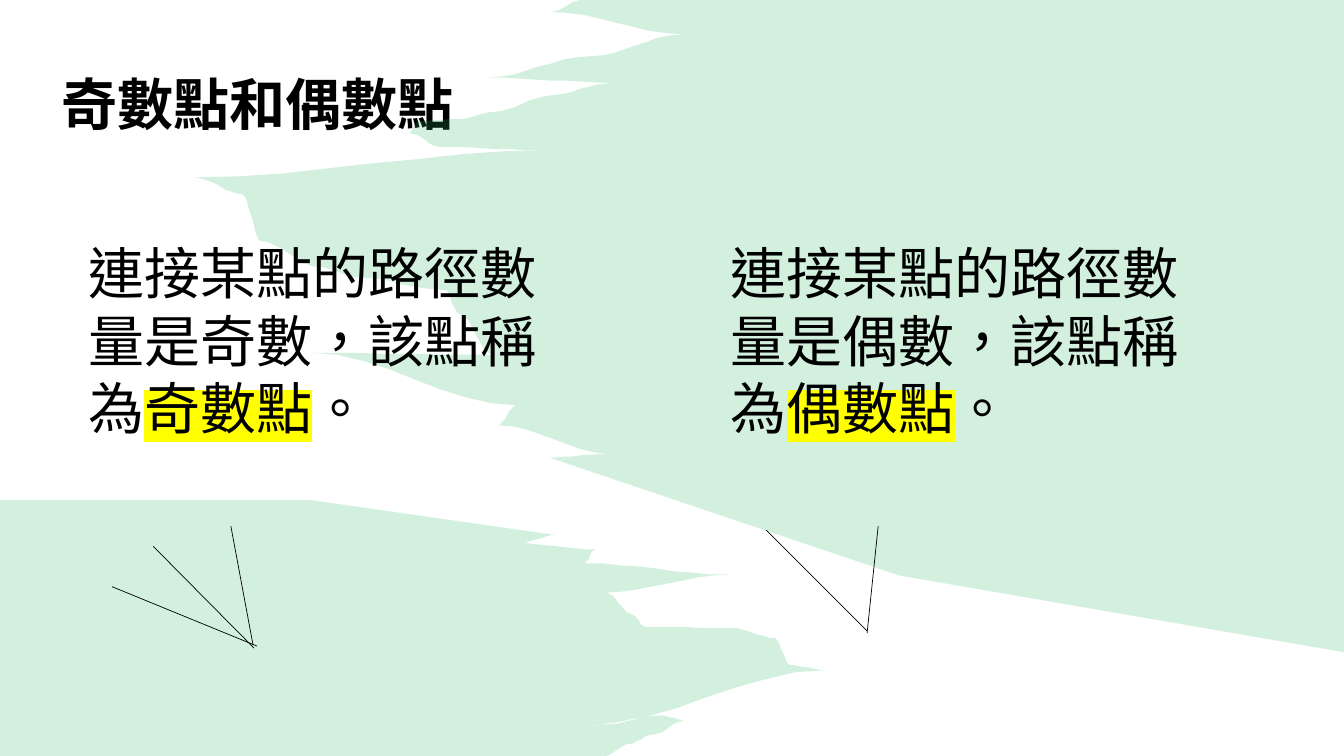
from itertools import pairwise
from lxml.etree import SubElement
from pptx import Presentation
from pptx.dml.color import RGBColor
from pptx.enum.lang import MSO_LANGUAGE_ID
from pptx.enum.shapes import MSO_CONNECTOR
from pptx.enum.text import MSO_ANCHOR, MSO_AUTO_SIZE, PP_ALIGN
from pptx.oxml import parse_xml
from pptx.oxml.ns import nsdecls, qn
from pptx.util import Pt

PX = 9144  # 100 px to the inch
STEPS = 8
COLORS = {"text": "000000", "paper": "FFFFFF", "brush": "21B857", "marker": "FFFF00"}

# Each brush stroke: straight corners, then the turning points of its ragged edge.
BRUSHES = [
    ([(545, 454), (892, 571), (1333, 647), (1333, 0), (575, 0)],
     [(548, 12), (678, 34), (584, 56), (485, 77), (608, 82), (544, 95),
      (492, 111), (455, 118), (415, 120), (406, 132), (437, 146), (547, 149),
      (193, 176), (241, 193), (258, 239), (316, 265), (355, 275), (442, 288),
      (455, 311), (489, 352), (309, 350), (512, 402), (494, 422), (605, 450),
      (545, 454)]),
    ([(552, 531), (307, 496), (0, 496), (0, 750), (601, 750)],
     [(623, 738), (647, 729), (679, 715), (657, 710), (582, 720), (818, 665),
      (784, 660), (768, 633), (726, 623), (639, 622), (628, 610), (601, 588),
      (722, 570), (580, 559), (590, 545), (513, 539), (552, 531)]),
]
DEFINITIONS = [
    ((78, 232, 473, 212), "連接某點的路徑數量是奇數，該點稱為", "奇數點"),
    ((715, 232, 516, 212), "連接某點的路徑數量是偶數，該點稱為", "偶數點"),
]
PATH_GROUPS = [
    [((152, 542), (252, 643)), ((229, 522), (251, 640)), ((111, 582), (255, 641))],
    [((760, 526), (860, 626)), ((871, 522), (860, 628))],
]


def smooth_edge(turns):
    """Join turning points with curves that are level at each turn."""
    outline = []
    for (left, top), (right, bottom) in pairwise(turns):
        for step in range(1, STEPS + 1):
            t = step / STEPS
            ease = t * t * (3 - 2 * t)
            outline.append((left + (right - left) * t, top + (bottom - top) * ease))
    return outline


def style_span(span, font_name):
    span.font.size = Pt(40)
    span.font.color.rgb = RGBColor.from_string(COLORS["text"])
    span.font.name = font_name
    span.font.language_id = MSO_LANGUAGE_ID.TRADITIONAL_CHINESE
    SubElement(span.font._element, qn("a:ea")).set("typeface", font_name)


deck = Presentation()
deck.slide_width, deck.slide_height = 1333 * PX, 750 * PX
page = deck.slides.add_slide(deck.slide_layouts[5])
page.background.fill.solid()
page.background.fill.fore_color.rgb = RGBColor.from_string(COLORS["paper"])

for corners, turns in BRUSHES:
    builder = page.shapes.build_freeform(*corners[0], scale=PX)
    builder.add_line_segments(corners[1:] + smooth_edge([corners[-1]] + turns))
    brush = builder.convert_to_shape()
    brush.shadow.inherit = False
    brush.line.fill.background()
    brush.fill.solid()
    brush.fill.fore_color.rgb = RGBColor.from_string(COLORS["brush"])
    color = brush._element.spPr.find(qn("a:solidFill"))[0]
    SubElement(color, qn("a:alpha")).set("val", "20000")

title = page.shapes.title
title.left, title.top, title.width, title.height = (n * PX for n in (51, 48, 476, 118))
title.text_frame.text = "奇數點和偶數點"
title.text_frame.vertical_anchor = MSO_ANCHOR.MIDDLE
heading = title.text_frame.paragraphs[0]
heading.alignment = PP_ALIGN.LEFT
heading.line_spacing = 0.9
style_span(heading.runs[0], "Lato")
heading.runs[0].font.bold = True

for place, sentence, term in DEFINITIONS:
    box = page.shapes.add_textbox(*(n * PX for n in place))
    box.text_frame.word_wrap = True
    box.text_frame.auto_size = MSO_AUTO_SIZE.SHAPE_TO_FIT_TEXT
    para = box.text_frame.paragraphs[0]
    for text in (sentence, term, "。"):
        span = para.add_run()
        span.text = text
        style_span(span, "League Spartan")
    highlight = parse_xml(
        f'<a:highlight {nsdecls("a")}><a:srgbClr val="{COLORS["marker"]}"/></a:highlight>')
    para.runs[1].font._element.find(qn("a:solidFill")).addnext(highlight)

for paths in PATH_GROUPS:
    group = page.shapes.add_group_shape()
    for start, end in paths:
        line = group.shapes.add_connector(
            MSO_CONNECTOR.STRAIGHT, *(n * PX for n in start + end))
        line.line.color.rgb = RGBColor.from_string(COLORS["text"])
        line.line.width = Pt(0.5)
        SubElement(line._element.spPr, qn("a:effectLst"))

deck.save("out.pptx")
